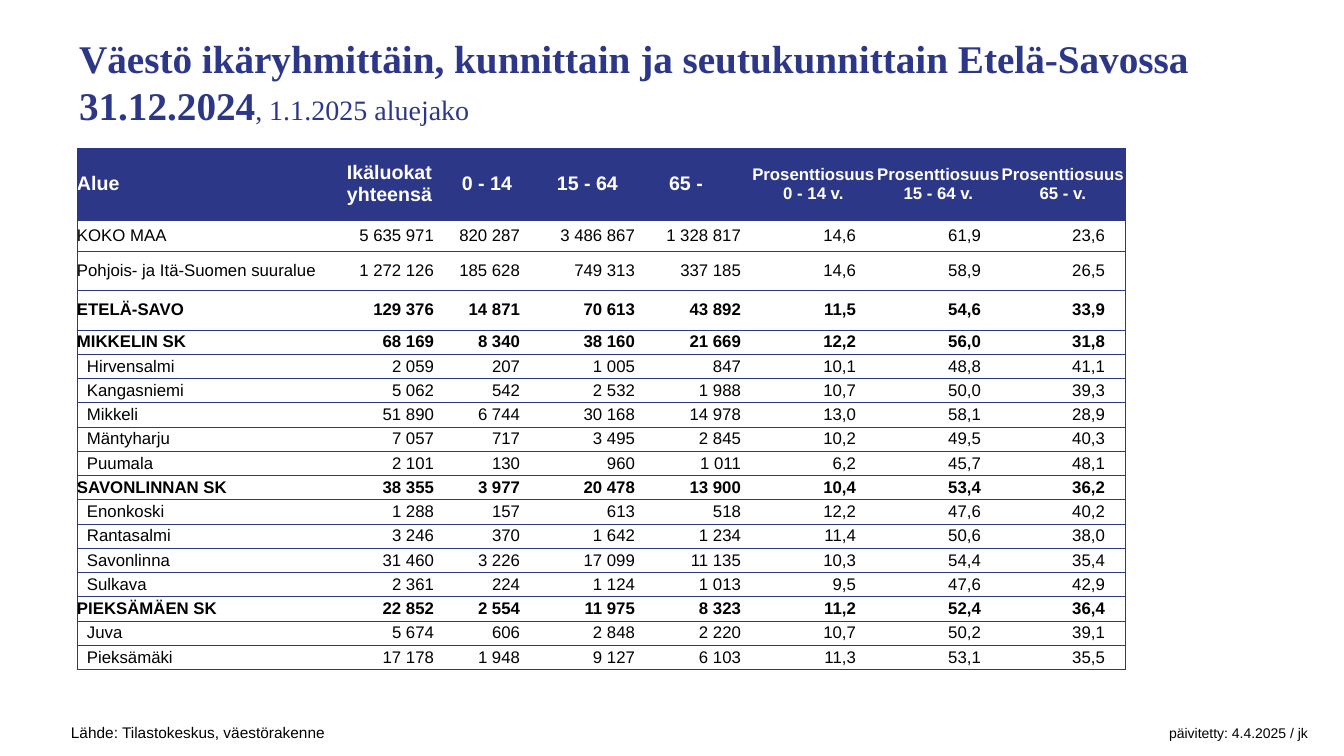
import pptx
import pptx.util
import pptx.dml.color
import pptx.enum.text
import pptx.oxml
import pptx.oxml.ns

COLOURS = {"navy": "2D3787", "white": "FFFFFF", "black": "000000"}
TITLE = [
    ("Väestö ikäryhmittäin, kunnittain ja seutukunnittain Etelä-Savossa 31.12.2024", 28, True),
    (", 1.1.2025 aluejako", 20, False),
]
HEADINGS = [
    "Alue", "Ikäluokat yhteensä", "0 - 14", "15 - 64", "65 -",
    "Prosenttiosuus 0 - 14 v.", "Prosenttiosuus 15 - 64 v.", "Prosenttiosuus 65 - v.",
]
AREAS = [
    ("plain", "KOKO MAA", "5 635 971", "820 287", "3 486 867", "1 328 817", "14,6", "61,9", "23,6"),
    ("plain", "Pohjois- ja Itä-Suomen suuralue", "1 272 126", "185 628", "749 313", "337 185", "14,6", "58,9", "26,5"),
    ("bold", "ETELÄ-SAVO", "129 376", "14 871", "70 613", "43 892", "11,5", "54,6", "33,9"),
    ("bold", "MIKKELIN SK", "68 169", "8 340", "38 160", "21 669", "12,2", "56,0", "31,8"),
    ("town", "Hirvensalmi", "2 059", "207", "1 005", "847", "10,1", "48,8", "41,1"),
    ("town", "Kangasniemi", "5 062", "542", "2 532", "1 988", "10,7", "50,0", "39,3"),
    ("town", "Mikkeli", "51 890", "6 744", "30 168", "14 978", "13,0", "58,1", "28,9"),
    ("town", "Mäntyharju", "7 057", "717", "3 495", "2 845", "10,2", "49,5", "40,3"),
    ("town", "Puumala", "2 101", "130", "960", "1 011", "6,2", "45,7", "48,1"),
    ("bold", "SAVONLINNAN SK", "38 355", "3 977", "20 478", "13 900", "10,4", "53,4", "36,2"),
    ("town", "Enonkoski", "1 288", "157", "613", "518", "12,2", "47,6", "40,2"),
    ("town", "Rantasalmi", "3 246", "370", "1 642", "1 234", "11,4", "50,6", "38,0"),
    ("town", "Savonlinna", "31 460", "3 226", "17 099", "11 135", "10,3", "54,4", "35,4"),
    ("town", "Sulkava", "2 361", "224", "1 124", "1 013", "9,5", "47,6", "42,9"),
    ("bold", "PIEKSÄMÄEN SK", "22 852", "2 554", "11 975", "8 323", "11,2", "52,4", "36,4"),
    ("town", "Juva", "5 674", "606", "2 848", "2 220", "10,7", "50,2", "39,1"),
    ("town", "Pieksämäki", "17 178", "1 948", "9 127", "6 103", "11,3", "53,1", "35,5"),
]
SOURCE = "Lähde: Tilastokeskus, väestörakenne"
UPDATED = "päivitetty: 4.4.2025 / jk"

COLUMN_WIDTHS = [258, 109, 86, 115, 106, 125, 125, 124]
TOP_ROW_HEIGHTS = [72, 31, 39, 40]
DISTRICT_HEIGHT = 340
FIRST_PERCENT_COLUMN = 5
OPEN_AGE_COLUMN = 4
NO_GRID_STYLE = "{2D5ABB26-0587-4C30-8999-92F81FD0307C}"
ALIGN = pptx.enum.text.PP_ALIGN
MIDDLE = pptx.enum.text.MSO_ANCHOR.MIDDLE


def px(length):
    return pptx.util.Emu(round(length * 914400 / 100.8))


def write(para, text, size=12, font="Arial", colour="black", bold=False, align=ALIGN.LEFT):
    para.alignment = align
    span = para.add_run()
    span.text = text
    span.font.size = pptx.util.Pt(size)
    span.font.name = font
    span.font.bold = bold
    span.font.color.rgb = pptx.dml.color.RGBColor.from_string(COLOURS[colour])


def add_borders(cell, sides):
    properties = cell._tc.get_or_add_tcPr()
    for position, side in enumerate(sides):
        properties.insert(position, pptx.oxml.parse_xml(
            f'<a:ln{side} {pptx.oxml.ns.nsdecls("a")} w="6350"><a:solidFill>'
            f'<a:srgbClr val="{COLOURS["navy"]}"/></a:solidFill></a:ln{side}>'))


def add_title(page):
    box = page.shapes.title
    box.left, box.top, box.width, box.height = px(69), px(36), px(1182), px(90)
    frame = box.text_frame
    frame.word_wrap = True
    frame.auto_size = pptx.enum.text.MSO_AUTO_SIZE.NONE
    frame.vertical_anchor = MIDDLE
    for text, size, bold in TITLE:
        write(frame.paragraphs[0], text, size=size, font="Times New Roman", colour="navy", bold=bold)


def fill_cell(cell, row, column, text, style):
    heading = row == 0
    left, right = 0, 0
    if heading:
        size = 12 if column >= FIRST_PERCENT_COLUMN else 14
        align = ALIGN.CENTER if column else ALIGN.LEFT
        right = 24 if column == OPEN_AGE_COLUMN else 0
        cell.fill.solid()
        cell.fill.fore_color.rgb = pptx.dml.color.RGBColor.from_string(COLOURS["navy"])
    else:
        size = 12
        align = ALIGN.RIGHT if column else ALIGN.LEFT
        left = 10 if style == "town" and column == 0 else 0
        if column:
            right = 20 if column >= FIRST_PERCENT_COLUMN else 10
        cell.fill.background()
    cell.margin_left, cell.margin_right = px(left), px(right)
    cell.margin_top = cell.margin_bottom = 0
    cell.vertical_anchor = MIDDLE
    write(cell.text_frame.paragraphs[0], text, size=size, align=align,
          colour="white" if heading else "black", bold=heading or style == "bold")
    sides = ["L"] if column == 0 else []
    sides += ["R"] if column == len(HEADINGS) - 1 else []
    add_borders(cell, sides + ["T", "B"])


def add_population_table(page):
    rows = [("bold", *HEADINGS)] + AREAS
    district_rows = len(rows) - len(TOP_ROW_HEIGHTS)
    heights = TOP_ROW_HEIGHTS + [DISTRICT_HEIGHT / district_rows] * district_rows
    frame = page.shapes.add_table(len(rows), len(HEADINGS), px(77), px(148),
                                  px(sum(COLUMN_WIDTHS)), px(sum(heights)))
    table = frame.table
    table.horz_banding = False
    table._tbl.tblPr.find(pptx.oxml.ns.qn("a:tableStyleId")).text = NO_GRID_STYLE
    for column, width in zip(table.columns, COLUMN_WIDTHS):
        column.width = px(width)
    for row, (height, (style, *texts)) in enumerate(zip(heights, rows)):
        table.rows[row].height = px(height)
        for column, text in enumerate(texts):
            fill_cell(table.cell(row, column), row, column, text, style)


def add_footer(page):
    box = page.shapes.add_textbox(px(61), px(718), px(1270), px(33))
    box.text_frame.word_wrap = True
    para = box.text_frame.paragraphs[0]
    para._p.get_or_add_pPr().append(pptx.oxml.parse_xml(
        f'<a:tabLst {pptx.oxml.ns.nsdecls("a")}><a:tab pos="{px(1237)}" algn="r"/></a:tabLst>'))
    write(para, SOURCE + "\t", size=11)
    write(para, UPDATED, size=10)


def main():
    deck = pptx.Presentation()
    deck.slide_width, deck.slide_height = px(1344), px(756)
    page = deck.slides.add_slide(deck.slide_layouts[5])
    add_title(page)
    add_population_table(page)
    add_footer(page)
    deck.save("out.pptx")


if __name__ == "__main__":
    main()
